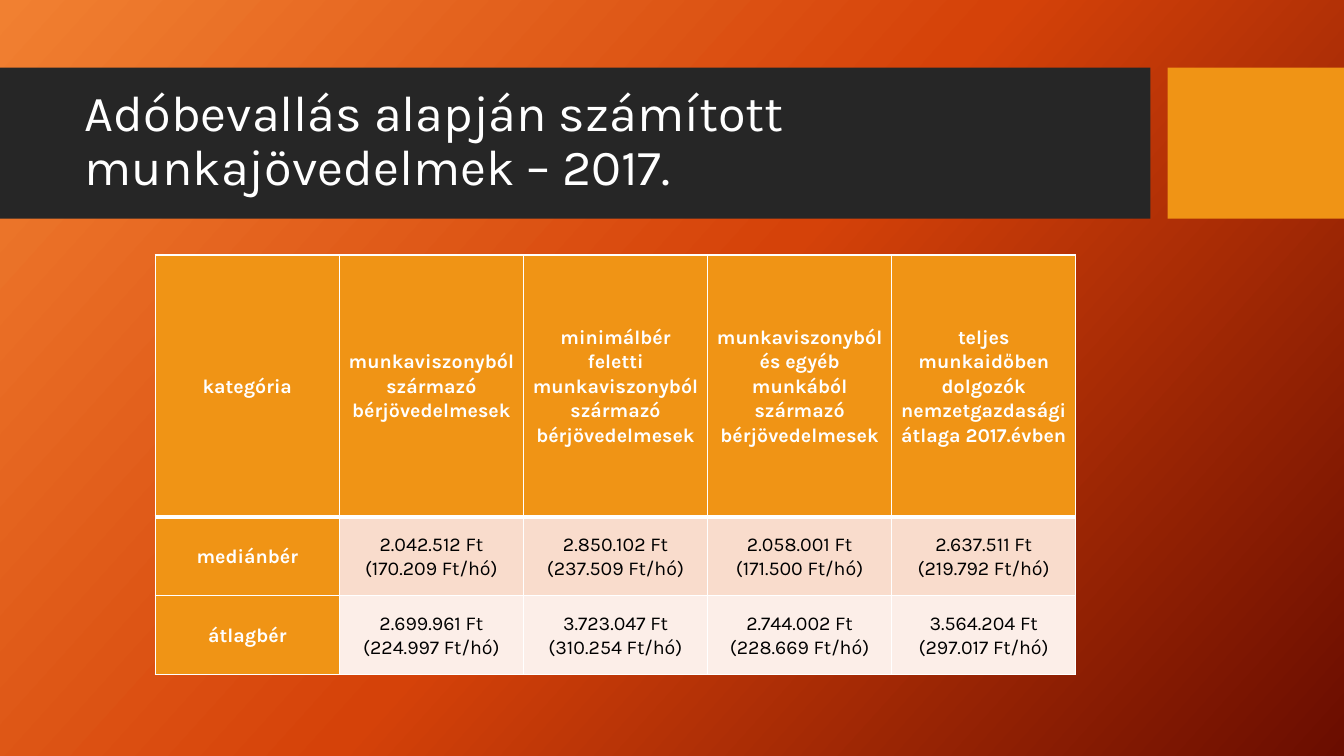
from copy import deepcopy

from pptx import Presentation
from pptx.dml.color import RGBColor
from pptx.enum import shapes, text
from pptx.oxml import ns, xmlchemy
from pptx.util import Inches, Pt

FONT = "Karla"
COLORS = {
    "light": "F18031", "mid": "D54209", "deep": "6A0D00",
    "dark": "262626", "gold": "F09415", "white": "FFFFFF",
    "black": "000000", "peach": "F9DCCC", "pale": "FCEEE8",
}
TITLE = "Adóbevallás alapján számított munkajövedelmek – 2017."
ROWS = [
    ["kategória",
     "munkaviszonyból származó bérjövedelmesek",
     "minimálbér feletti munkaviszonyból származó bérjövedelmesek",
     "munkaviszonyból és egyéb munkából származó bérjövedelmesek",
     "teljes munkaidőben dolgozók nemzetgazdasági átlaga 2017.évben"],
    ["mediánbér", "2.042.512 Ft (170.209 Ft/hó)", "2.850.102 Ft (237.509 Ft/hó)",
     "2.058.001 Ft (171.500 Ft/hó)", "2.637.511 Ft (219.792 Ft/hó)"],
    ["átlagbér", "2.699.961 Ft (224.997 Ft/hó)", "3.723.047 Ft (310.254 Ft/hó)",
     "2.744.002 Ft (228.669 Ft/hó)", "3.564.204 Ft (297.017 Ft/hó)"],
]
HEIGHTS = [2.6, 0.78, 0.78]
BANDS = ["gold", "peach", "pale"]


def rgb(name):
    return RGBColor.from_string(COLORS[name])


def add_run(par, words, size, color, bold=False):
    run = par.add_run()
    run.text = words
    run.font.name = FONT
    run.font.size = Pt(size)
    run.font.bold = bold
    run.font.color.rgb = rgb(color)


def set_back(slide):
    fill = slide.background.fill
    fill.gradient()
    fill.gradient_angle = 360 - 42
    stops = slide.element.find(".//" + ns.qn("a:gsLst"))
    stops.append(deepcopy(stops[0]))
    for stop, name, place in zip(fill.gradient_stops, ["light", "mid", "deep"], [0, 0.5, 1]):
        stop.color.rgb = rgb(name)
        stop.position = place


def add_bar(slide, left, width, color):
    bar = slide.shapes.add_shape(shapes.MSO_SHAPE.RECTANGLE, Inches(left),
                                 Inches(0.67), Inches(width), Inches(1.5))
    bar.shadow.inherit = False
    bar.fill.solid()
    bar.fill.fore_color.rgb = rgb(color)
    bar.line.fill.background()
    # Keep the bar behind the title
    slide.shapes.title.element.addprevious(bar.element)


def set_title(slide):
    title = slide.shapes.title
    title.left, title.top = Inches(0.74), Inches(0.82)
    title.width, title.height = Inches(10.51), Inches(1.18)
    frame = title.text_frame
    frame.word_wrap = True
    frame.auto_size = text.MSO_AUTO_SIZE.NONE
    frame.vertical_anchor = text.MSO_ANCHOR.MIDDLE
    par = frame.paragraphs[0]
    par.alignment = text.PP_ALIGN.LEFT
    par.line_spacing = 0.9
    add_run(par, TITLE, 36, "white")


def set_edges(cell, widths):
    props = cell._tc.get_or_add_tcPr()
    for spot, (side, width) in enumerate(widths.items()):
        line = xmlchemy.OxmlElement(f"a:ln{side}")
        line.set("w", str(Pt(width)))
        fill = xmlchemy.OxmlElement("a:solidFill")
        color = xmlchemy.OxmlElement("a:srgbClr")
        color.set("val", COLORS["white"])
        fill.append(color)
        line.append(fill)
        props.insert(spot, line)


def fill_cell(cell, words, row, col):
    head = row == 0 or col == 0
    cell.fill.solid()
    cell.fill.fore_color.rgb = rgb("gold" if head else BANDS[row])
    cell.margin_left = cell.margin_right = Inches(0.07)
    cell.margin_top = cell.margin_bottom = 0
    cell.vertical_anchor = text.MSO_ANCHOR.MIDDLE
    par = cell.text_frame.paragraphs[0]
    par.alignment = text.PP_ALIGN.CENTER
    par.line_spacing = 1.07
    add_run(par, words, 14, "white" if head else "black", head)
    # A thick rule parts the header from the data
    set_edges(cell, {"L": 1, "R": 1, "T": 3 if row == 1 else 1, "B": 3 if row == 0 else 1})


def add_wages(slide):
    frame = slide.shapes.add_table(len(ROWS), len(ROWS[0]), Inches(1.54), Inches(2.53),
                                   Inches(9.13), Inches(sum(HEIGHTS)))
    table = frame.table
    for row, cells in enumerate(ROWS):
        table.rows[row].height = Inches(HEIGHTS[row])
        for col, words in enumerate(cells):
            fill_cell(table.cell(row, col), words, row, col)


def main():
    deck = Presentation()
    deck.slide_width, deck.slide_height = Inches(13.33), Inches(7.5)
    slide = deck.slides.add_slide(deck.slide_layouts[5])
    set_back(slide)
    # Title band
    add_bar(slide, 0, 11.41, "dark")
    add_bar(slide, 11.58, 1.75, "gold")
    set_title(slide)
    # Wage table
    add_wages(slide)
    deck.save("out.pptx")


if __name__ == "__main__":
    main()
